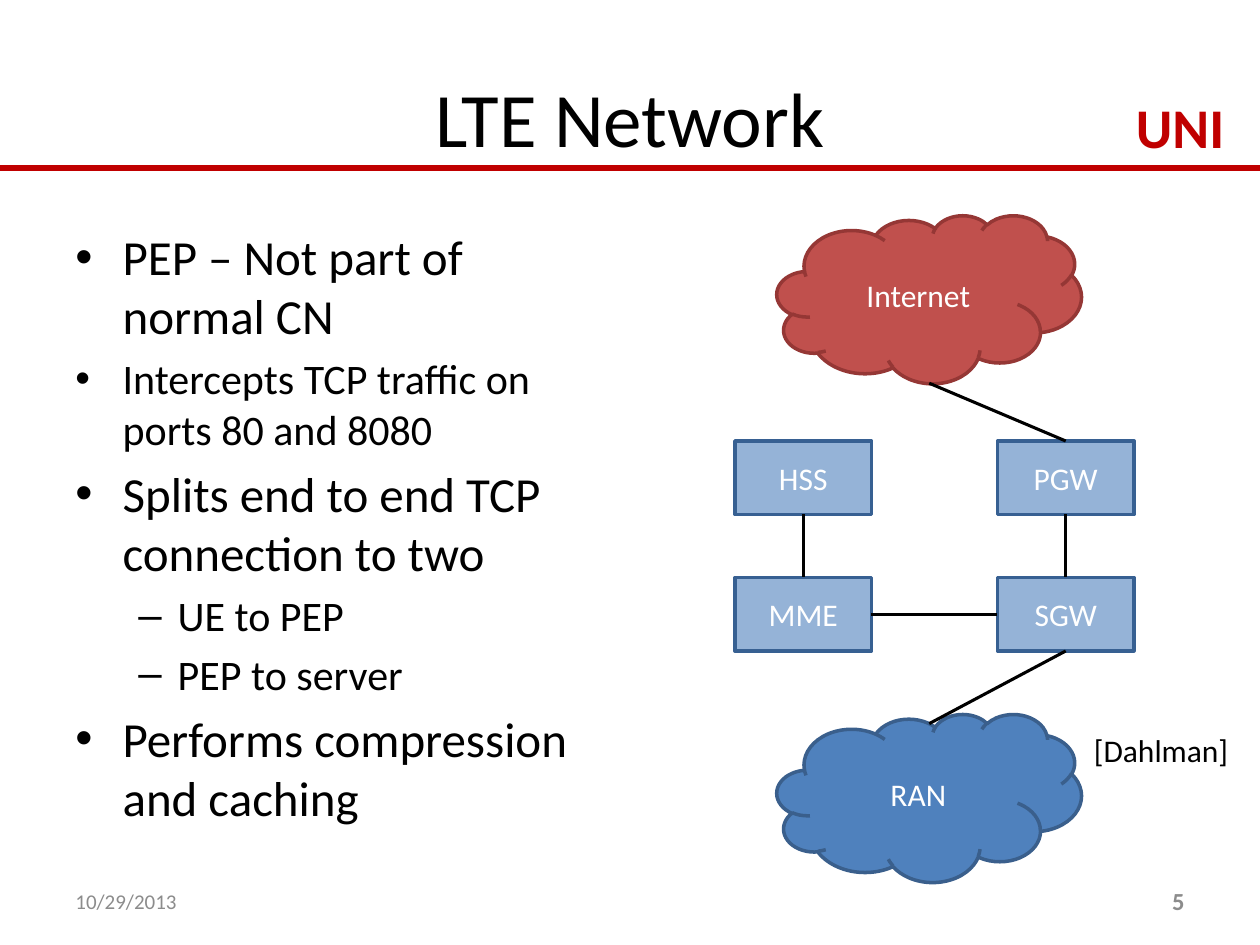
from lxml import etree
from pptx import Presentation
from pptx.dml.color import RGBColor
from pptx.enum.shapes import MSO_CONNECTOR, MSO_SHAPE
from pptx.enum.text import MSO_ANCHOR, PP_ALIGN
from pptx.oxml.ns import qn
from pptx.util import Pt

LEFT, CENTER, RIGHT = PP_ALIGN.LEFT, PP_ALIGN.CENTER, PP_ALIGN.RIGHT
TOP_ANCHOR, MIDDLE = MSO_ANCHOR.TOP, MSO_ANCHOR.MIDDLE
CLOUD, RECTANGLE = MSO_SHAPE.CLOUD, MSO_SHAPE.RECTANGLE
STRAIGHT = MSO_CONNECTOR.STRAIGHT
TOP, LEFT_SIDE, BOTTOM, RIGHT_SIDE = range(4)  # connection sites of a rectangle

FONT = "Calibri"
BLACK = RGBColor(0x00, 0x00, 0x00)
WHITE = RGBColor(0xFF, 0xFF, 0xFF)
GRAY = RGBColor(0x8C, 0x8C, 0x8C)
CRIMSON = RGBColor(0xC0, 0x00, 0x00)
RED = RGBColor(0xC0, 0x50, 0x4D)
DARK_RED = RGBColor(0x95, 0x37, 0x35)
BLUE = RGBColor(0x4F, 0x81, 0xBD)
DARK_BLUE = RGBColor(0x3A, 0x5F, 0x8C)
LIGHT_BLUE = RGBColor(0x95, 0xB3, 0xD7)
NODE_EDGE = RGBColor(0x37, 0x60, 0x92)

TITLE = "LTE Network"

# text, size, bullet, left margin, hanging indent
BULLETS = [
    ("PEP – Not part of normal CN", 28, "•", 27, 27),
    ("Intercepts TCP traffic on ports 80 and 8080", 24, "•", 27, 27),
    ("Splits end to end TCP connection to two", 28, "•", 27, 27),
    ("UE to PEP", 24, "–", 58.5, 22.5),
    ("PEP to server", 24, "–", 58.5, 22.5),
    ("Performs compression and caching", 28, "•", 27, 27),
]

# text, box, size, colour, bold, alignment, anchor, wrap
LABELS = [
    ("UNI", (642, 49.5, 70, 46), 32, CRIMSON, True, LEFT, TOP_ANCHOR, False),
    ("10/29/2013", (36, 500.5, 168, 28.75), 12, GRAY, False, LEFT, MIDDLE, True),
    ("5", (516, 500.5, 168, 28.75), 14, GRAY, True, RIGHT, MIDDLE, True),
    ("[Dahlman]", (618, 414, 92, 29), 18, BLACK, False, LEFT, TOP_ANCHOR, False),
]

# name, top, fill, edge
CLOUDS = [("Internet", 123, RED, DARK_RED), ("RAN", 408, BLUE, DARK_BLUE)]
CLOUD_LEFT, CLOUD_W, CLOUD_H = 444, 174, 96

NODE_GRID = [["HSS", "PGW"], ["MME", "SGW"]]
GRID_LEFT, GRID_TOP, COLUMN_STEP, ROW_STEP = 420, 252, 150, 78
NODE_W, NODE_H = 78, 42

NODE_LINKS = [
    ("PGW", BOTTOM, "SGW", TOP),
    ("MME", RIGHT_SIDE, "SGW", LEFT_SIDE),
    ("HSS", BOTTOM, "MME", TOP),
]
# node, site, point on the cloud's outline
CLOUD_X = CLOUD_LEFT + CLOUD_W / 2
CLOUD_LINKS = [("PGW", TOP, (CLOUD_X, 219)), ("SGW", BOTTOM, (CLOUD_X, 413.5))]


def pts(*values):
    return [Pt(value) for value in values]


def add_run(paragraph, text, size, color, bold=False):
    run = paragraph.add_run()
    run.text = text
    run.font.name = FONT
    run.font.size = Pt(size)
    run.font.bold = bold
    run.font.color.rgb = color


def add_label(slide, text, box, size, color, bold, alignment, anchor, wrap):
    frame = slide.shapes.add_textbox(*pts(*box)).text_frame
    frame.word_wrap = wrap
    frame.vertical_anchor = anchor
    frame.paragraphs[0].alignment = alignment
    add_run(frame.paragraphs[0], text, size, color, bold)


def set_bullet(paragraph, bullet, margin, hanging):
    properties = paragraph._p.get_or_add_pPr()
    properties.set("marL", str(Pt(margin)))
    properties.set("indent", str(-Pt(hanging)))
    etree.SubElement(properties, qn("a:buFont")).set("typeface", "Arial")
    etree.SubElement(properties, qn("a:buChar")).set("char", bullet)


def add_bullets(slide):
    frame = slide.shapes.add_textbox(*pts(36, 126, 318, 356.5)).text_frame
    frame.word_wrap = True
    for index, (text, size, bullet, margin, hanging) in enumerate(BULLETS):
        paragraph = frame.add_paragraph() if index else frame.paragraphs[0]
        paragraph.space_before = Pt(0.2 * size)
        set_bullet(paragraph, bullet, margin, hanging)
        add_run(paragraph, text, size, BLACK)


def add_element(slide, kind, name, box, fill, edge):
    """Add a labelled cloud or node of the network."""
    shape = slide.shapes.add_shape(kind, *pts(*box))
    shape.shadow.inherit = False
    shape.fill.solid()
    shape.fill.fore_color.rgb = fill
    shape.line.color.rgb = edge
    shape.line.width = Pt(2)
    frame = shape.text_frame
    frame.vertical_anchor = MIDDLE
    frame.paragraphs[0].alignment = CENTER
    add_run(frame.paragraphs[0], name, 18, WHITE)
    return shape


def add_line(slide, start=(0, 0), end=(0, 0), color=BLACK, width=1.75):
    line = slide.shapes.add_connector(STRAIGHT, *pts(*start, *end))
    line.line.color.rgb = color
    line.line.width = Pt(width)
    etree.SubElement(line._element.spPr, qn("a:effectLst"))
    return line


def add_network(slide):
    for name, top, fill, edge in CLOUDS:
        box = (CLOUD_LEFT, top, CLOUD_W, CLOUD_H)
        add_element(slide, CLOUD, name, box, fill, edge)

    nodes = {}
    for row, names in enumerate(NODE_GRID):
        for column, name in enumerate(names):
            box = (GRID_LEFT + column * COLUMN_STEP, GRID_TOP + row * ROW_STEP,
                   NODE_W, NODE_H)
            nodes[name] = add_element(slide, RECTANGLE, name, box, LIGHT_BLUE, NODE_EDGE)

    for source, source_site, target, target_site in NODE_LINKS:
        link = add_line(slide)
        link.begin_connect(nodes[source], source_site)
        link.end_connect(nodes[target], target_site)
    for node, site, point in CLOUD_LINKS:
        add_line(slide, point, point).end_connect(nodes[node], site)


def main():
    deck = Presentation()
    deck.slide_width, deck.slide_height = pts(720, 540)
    slide = deck.slides.add_slide(deck.slide_layouts.get_by_name("Title Only"))

    add_line(slide, (0, 96), (720, 96), CRIMSON, 3.25)
    title = slide.shapes.title
    title.left, title.top, title.width, title.height = pts(36, 21.75, 648, 90)
    title.text_frame.vertical_anchor = MIDDLE
    title.text_frame.paragraphs[0].alignment = CENTER
    add_run(title.text_frame.paragraphs[0], TITLE, 44, BLACK)

    add_bullets(slide)
    add_network(slide)
    for label in LABELS:
        add_label(slide, *label)
    deck.save("out.pptx")


if __name__ == "__main__":
    main()
